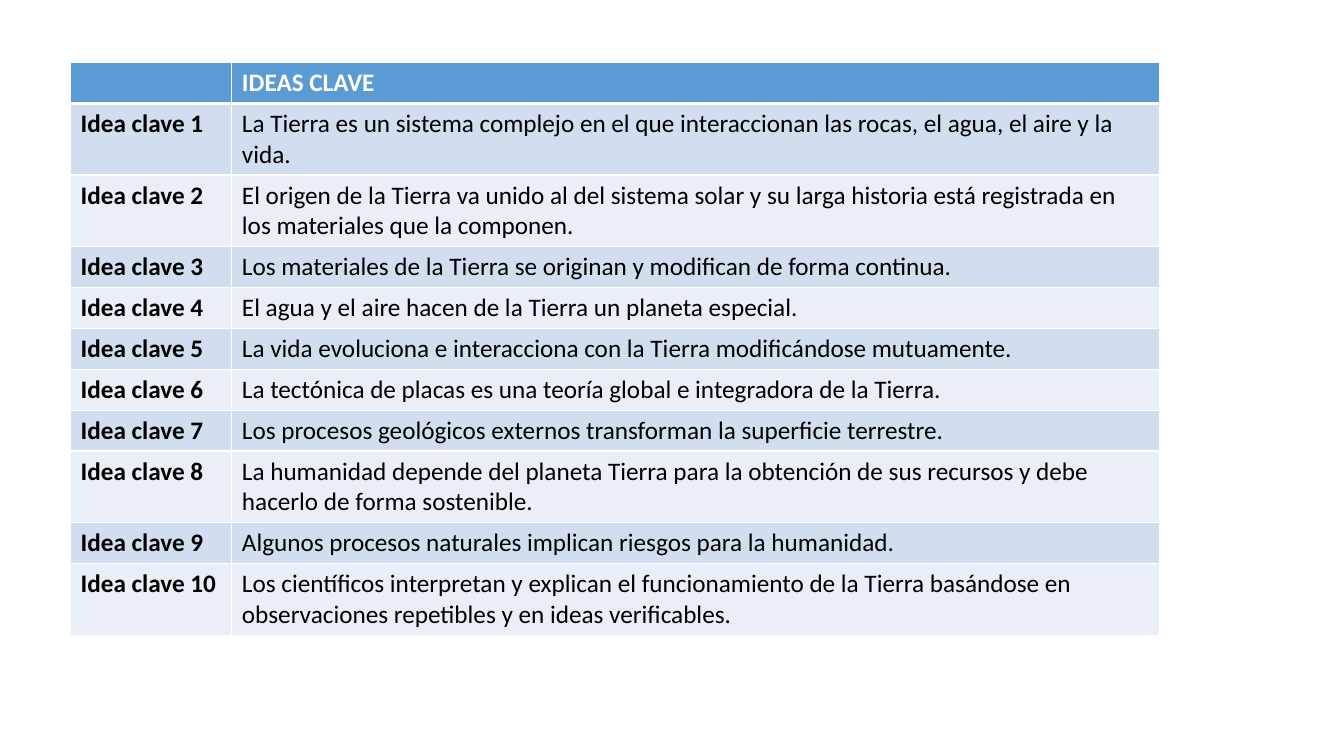
from lxml.etree import SubElement
from pptx import Presentation
from pptx.dml.color import RGBColor
from pptx.oxml.ns import qn
from pptx.util import Inches, Pt

FONT = "Calibri"
WHITE, BLACK = "FFFFFF", "000000"
HEADER_FILL = "5B9BD5"
BAND_FILLS = ["EAEFF7", "D2DEEF"]
COLUMN_WIDTHS = [1.6, 9.2]
ONE_LINE_HEIGHT, TWO_LINE_HEIGHT = 0.4, 0.71
LONGEST_LINE = 85

HEADING = "IDEAS CLAVE"
KEY_IDEAS = [
    "La Tierra es un sistema complejo en el que interaccionan las rocas, el agua, el aire y la vida.",
    "El origen de la Tierra va unido al del sistema solar y su larga historia está registrada en "
    "los materiales que la componen.",
    "Los materiales de la Tierra se originan y modifican de forma continua.",
    "El agua y el aire hacen de la Tierra un planeta especial.",
    "La vida evoluciona e interacciona con la Tierra modificándose mutuamente.",
    "La tectónica de placas es una teoría global e integradora de la Tierra.",
    "Los procesos geológicos externos transforman la superficie terrestre.",
    "La humanidad depende del planeta Tierra para la obtención de sus recursos y debe "
    "hacerlo de forma sostenible.",
    "Algunos procesos naturales implican riesgos para la humanidad.",
    "Los científicos interpretan y explican el funcionamiento de la Tierra basándose en "
    "observaciones repetibles y en ideas verificables.",
]


def color(hex_value):
    return RGBColor.from_string(hex_value)


def set_borders(cell, top, bottom):
    """Draw white borders; top and bottom are widths in points. Call before filling the cell."""
    properties = cell._tc.get_or_add_tcPr()
    for side, width in (("L", 1), ("R", 1), ("T", top), ("B", bottom)):
        line = SubElement(properties, qn(f"a:ln{side}"), w=str(Pt(width)))
        fill = SubElement(line, qn("a:solidFill"))
        SubElement(fill, qn("a:srgbClr"), val=WHITE)


def fill_cell(cell, text, fill, font_color, bold):
    cell.fill.solid()
    cell.fill.fore_color.rgb = color(fill)
    cell.text_frame.text = text
    font = cell.text_frame.paragraphs[0].font
    if text:
        font = cell.text_frame.paragraphs[0].runs[0].font
    font.name = FONT
    font.size = Pt(18)
    font.bold = bold
    font.color.rgb = color(font_color)


def add_ideas_table(slide):
    rows = [("", HEADING)]
    rows += [(f"Idea clave {number}", idea) for number, idea in enumerate(KEY_IDEAS, 1)]
    heights = [TWO_LINE_HEIGHT if len(idea) > LONGEST_LINE else ONE_LINE_HEIGHT for _, idea in rows]
    table = slide.shapes.add_table(
        len(rows), len(COLUMN_WIDTHS), Inches(0.7), Inches(0.62),
        Inches(sum(COLUMN_WIDTHS)), Inches(sum(heights)),
    ).table
    for column, width in zip(table.columns, COLUMN_WIDTHS):
        column.width = Inches(width)
    for row_index, (texts, height) in enumerate(zip(rows, heights)):
        table.rows[row_index].height = Inches(height)
        is_header = row_index == 0
        fill = HEADER_FILL if is_header else BAND_FILLS[row_index % 2]
        for column_index, text in enumerate(texts):
            cell = table.cell(row_index, column_index)
            set_borders(cell, top=3 if row_index == 1 else 1, bottom=3 if is_header else 1)
            fill_cell(cell, text, fill, WHITE if is_header else BLACK,
                      bold=is_header or column_index == 0)


def main():
    presentation = Presentation()
    presentation.slide_width = Inches(13.33)
    presentation.slide_height = Inches(7.5)
    slide = presentation.slides.add_slide(presentation.slide_layouts[6])
    add_ideas_table(slide)
    presentation.save("out.pptx")


if __name__ == "__main__":
    main()
